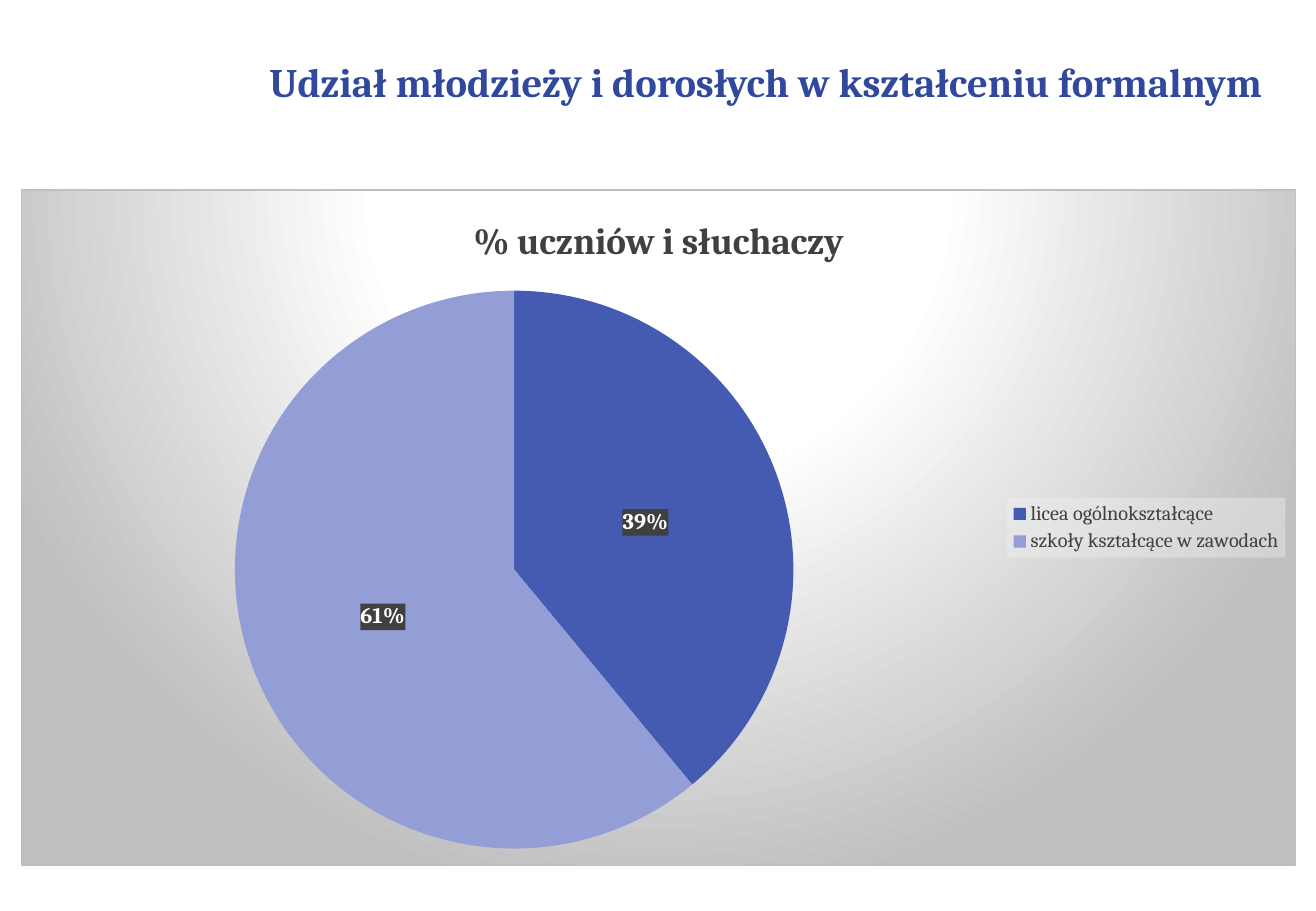
"""Build a slide with a pie chart of students by type of school."""
from pptx import Presentation
from pptx.chart.data import CategoryChartData
from pptx.dml.color import RGBColor
from pptx.enum.chart import XL_CHART_TYPE, XL_LABEL_POSITION, XL_LEGEND_POSITION
from pptx.enum.text import MSO_ANCHOR
from pptx.oxml import parse_xml
from pptx.oxml.ns import nsdecls
from pptx.util import Pt


def style_text(font, text_frame=None, text="", size=12, color="404040", bold=False):
    if text_frame is not None:
        run = text_frame.paragraphs[0].add_run()
        run.text = text
        font = run.font
    font.name = "Cambria"
    font.size = Pt(size)
    font.bold = bold
    font.color.rgb = RGBColor.from_string(color)


def add_background(preceding, fill, line="<a:ln><a:noFill/></a:ln>"):
    preceding.addnext(parse_xml(f'<c:spPr {nsdecls("c", "a")}>{fill}{line}</c:spPr>'))


prs = Presentation()
prs.slide_width, prs.slide_height = Pt(780), Pt(540)
slide = prs.slides.add_slide(prs.slide_layouts[6])

heading = slide.shapes.add_textbox(Pt(152.6), Pt(11.5), Pt(615.6), Pt(73.4)).text_frame
heading.word_wrap = True
heading.vertical_anchor = MSO_ANCHOR.MIDDLE
style_text(None, heading, "Udział młodzieży i dorosłych w kształceniu formalnym",
           size=24, color="31489F", bold=True)

schools = CategoryChartData()
schools.categories = ["licea ogólnokształcące", "szkoły kształcące w zawodach"]
schools.add_series("% uczniów i słuchaczy", [39, 61])
chart = slide.shapes.add_chart(XL_CHART_TYPE.PIE, Pt(12.2), Pt(112.3),
                               Pt(756), Pt(401), schools).chart
style_text(chart.font, size=10, color="000000")
chart.has_title = True
style_text(None, chart.chart_title.text_frame, "% uczniów i słuchaczy", size=22, bold=True)

chart.has_legend = True
chart.legend.position = XL_LEGEND_POSITION.RIGHT
chart.legend.include_in_layout = False
style_text(chart.legend.font)

plot = chart.plots[0]
plot.vary_by_categories = True
for index, color in enumerate(["455BB2", "939DD6"]):
    slice_format = plot.series[0].points[index].format
    slice_format.fill.solid()
    slice_format.fill.fore_color.rgb = RGBColor.from_string(color)
    slice_format.line.fill.background()

shares = plot.series[0].data_labels
shares.show_percentage = True
shares.show_value = False
shares.number_format = "0%"
shares.number_format_is_linked = False
shares.position = XL_LABEL_POSITION.CENTER
style_text(shares.font, size=13.3, color="FFFFFF", bold=True)

stops = "".join(f'<a:gs pos="{percent * 1000}"><a:srgbClr val="{color}"/></a:gs>'
                for percent, color in [(0, "FFFFFF"), (39, "FFFFFF"), (100, "BFBFBF")])
add_background(
    chart.element.xpath("c:chart")[0],
    f'<a:gradFill><a:gsLst>{stops}</a:gsLst><a:path path="circle">'
    '<a:fillToRect l="50000" t="-80000" r="50000" b="180000"/></a:path></a:gradFill>',
    '<a:ln w="9525"><a:solidFill><a:srgbClr val="BFBFBF"/></a:solidFill></a:ln>')
for preceding, color, opacity in [("c:legend/c:overlay", "F2F2F2", 39),
                                  ("c:dLbls/c:numFmt", "404040", 75)]:
    add_background(
        chart.element.xpath(f".//{preceding}")[0],
        f'<a:solidFill><a:srgbClr val="{color}"><a:alpha val="{opacity * 1000}"/>'
        '</a:srgbClr></a:solidFill>')

prs.save("out.pptx")
